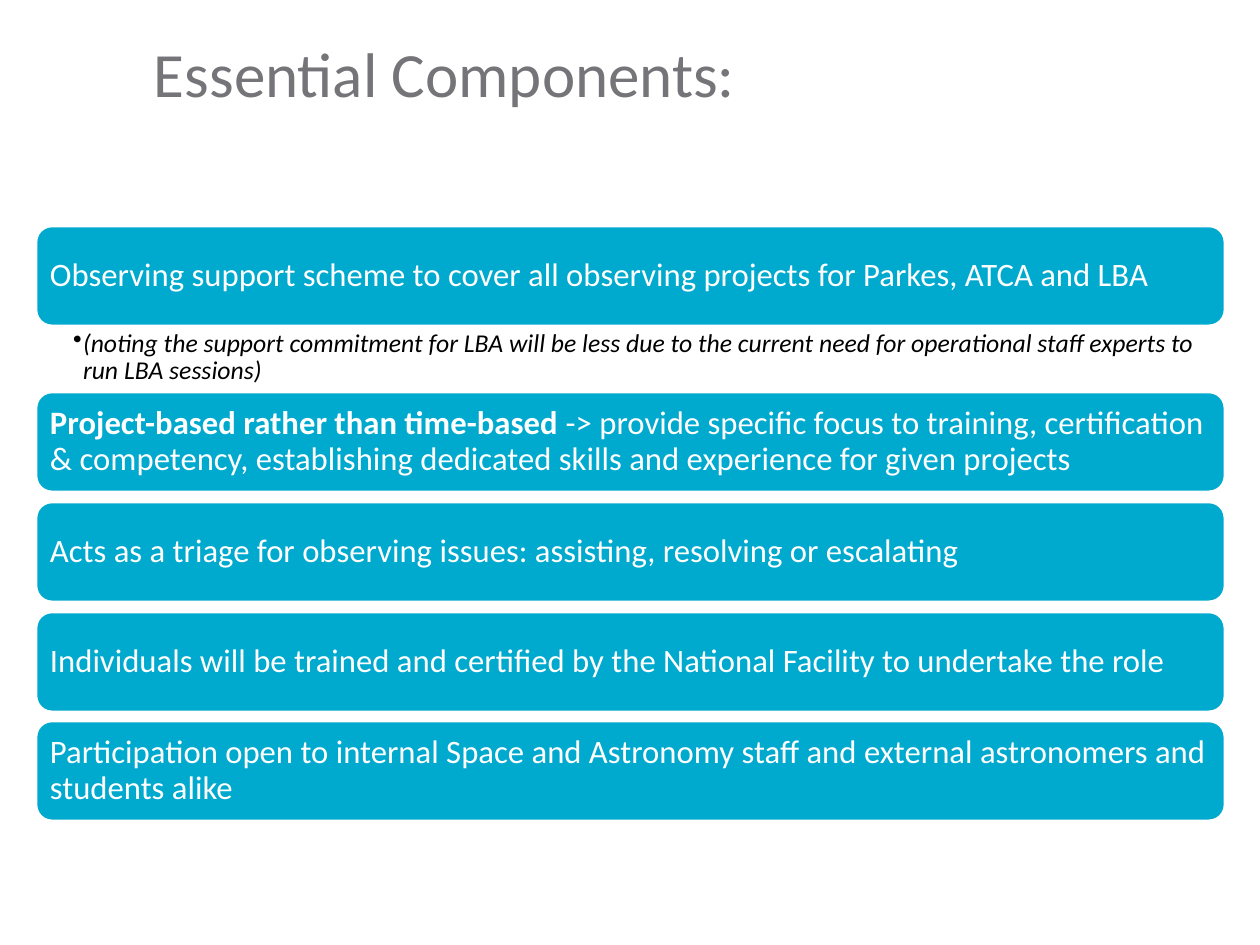
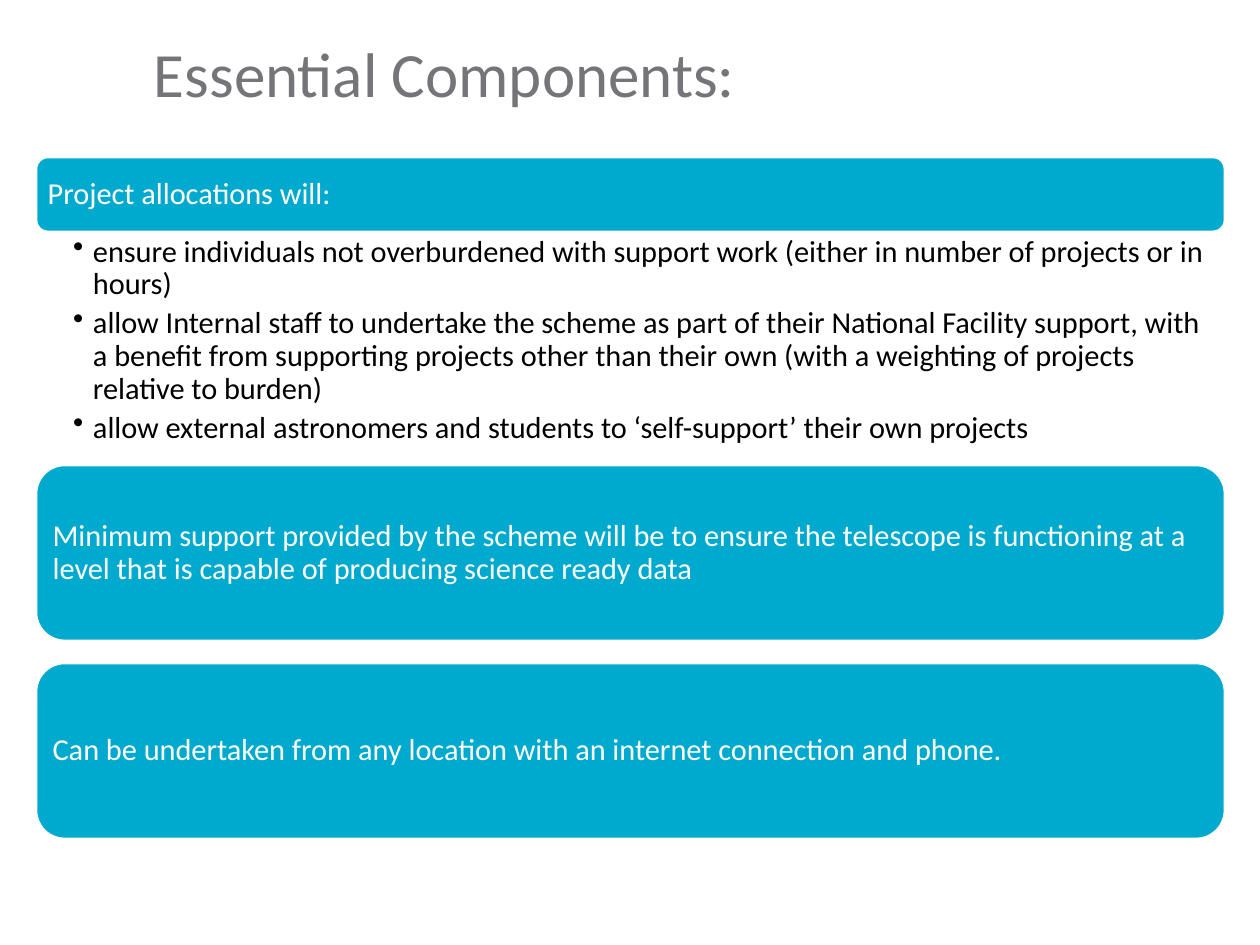
from lxml import etree
from pptx import Presentation
from pptx.dml.color import RGBColor
from pptx.enum.shapes import MSO_SHAPE
from pptx.enum.text import MSO_ANCHOR, PP_ALIGN
from pptx.oxml.ns import qn
from pptx.util import Emu, Pt

ROUNDED = MSO_SHAPE.ROUNDED_RECTANGLE
TOP, MIDDLE = MSO_ANCHOR.TOP, MSO_ANCHOR.MIDDLE
LEFT = PP_ALIGN.LEFT

CYAN = RGBColor(0x00, 0xA9, 0xCE)
GREY = RGBColor(0x75, 0x75, 0x79)
WHITE = RGBColor(0xFF, 0xFF, 0xFF)
BLACK = RGBColor(0x00, 0x00, 0x00)
FONT = "Calibri"
TITLE = "Essential Components:"
BAR_LEFT, BAR_WIDTH = 35, 1191


def px(length):
    return Emu(round(length * 914400 / 168))


def write(shape, paragraphs, *, size, color, insets=(0, 0, 0, 0), anchor=TOP,
          spacing=0.9, after=0, italic=False, hanging=0):
    frame = shape.text_frame
    frame.word_wrap = True
    frame.vertical_anchor = anchor
    (frame.margin_left, frame.margin_top,
     frame.margin_right, frame.margin_bottom) = map(px, insets)
    for index, runs in enumerate(paragraphs):
        paragraph = frame.add_paragraph() if index else frame.paragraphs[0]
        paragraph.alignment = LEFT
        paragraph.line_spacing = spacing
        paragraph.space_after = Pt(after)
        if hanging:
            properties = paragraph._p.get_or_add_pPr()
            properties.set("marL", str(px(hanging)))
            properties.set("indent", str(-px(hanging)))
            etree.SubElement(properties, qn("a:buChar")).set("char", "•")
        for text, bold in runs:
            run = paragraph.add_run()
            run.text = text
            font = run.font
            font.name, font.size, font.bold, font.italic = FONT, Pt(size), bold, italic
            font.color.rgb = color


slides = [
    {
        "size": 14,
        "inset": 10,
        "bars": [
            (225, 102, [("Observing support scheme to cover all observing projects for Parkes, ATCA and LBA", False)]),
            (391, 102, [
                ("Project-based rather than time-based", True),
                (" -> provide specific focus to training, certification & competency, "
                 "establishing dedicated skills and experience for given projects", False),
            ]),
            (501, 102, [("Acts as a triage for observing issues: assisting, resolving or escalating", False)]),
            (611, 102, [("Individuals will be trained and certified by the National Facility to undertake the role", False)]),
            (720, 102, [("Participation open to internal Space and Astronomy staff and external astronomers and students alike", False)]),
        ],
        "notes_box": (327, 64),
        "notes": [
            "(noting the support commitment for LBA will be less due to the current need "
            "for operational staff experts to run LBA sessions)",
        ],
        "notes_format": {"size": 11, "italic": True, "hanging": 10, "after": 2.2},
    },
    {
        "size": 13,
        "inset": 9,
        "bars": [
            (156, 77, [("Project allocations will:", False)]),
            (464, 178, [("Minimum support provided by the scheme will be to ensure the telescope is "
                         "functioning at a level that is capable of producing science ready data", False)]),
            (662, 178, [("Can be undertaken from any location with an internet connection and phone.", False)]),
        ],
        "notes_box": (233, 222),
        "notes": [
            "ensure individuals not overburdened with support work (either in number of projects or in hours)",
            "allow Internal staff to undertake the scheme as part of their National Facility support, "
            "with a benefit from supporting projects other than their own "
            "(with a weighting of projects relative to burden)",
            "allow external astronomers and students to ‘self-support’ their own projects",
        ],
        "notes_format": {"size": 13, "hanging": 20, "after": 2.6},
    },
]

presentation = Presentation()
presentation.slide_width = px(1260)
presentation.slide_height = px(945)
blank_layout = presentation.slide_layouts[6]

for content in slides:
    slide = presentation.slides.add_slide(blank_layout)

    title = slide.shapes.add_textbox(px(154), px(35), px(1071), px(118))
    write(title, [[(TITLE, False)]], size=27, color=GREY, spacing=1.0)

    for top, height, runs in content["bars"]:
        bar = slide.shapes.add_shape(ROUNDED, px(BAR_LEFT), px(top), px(BAR_WIDTH), px(height))
        bar.shadow.inherit = False
        bar.fill.solid()
        bar.fill.fore_color.rgb = CYAN
        bar.line.color.rgb = WHITE
        bar.line.width = Pt(2)
        write(bar, [runs], size=content["size"], color=WHITE,
              insets=(content["inset"],) * 4, anchor=MIDDLE)

    top, height = content["notes_box"]
    notes = slide.shapes.add_textbox(px(BAR_LEFT), px(top), px(BAR_WIDTH), px(height))
    write(notes, [[(text, False)] for text in content["notes"]],
          color=BLACK, insets=(38, 3, 17, 3), **content["notes_format"])

presentation.save("out.pptx")
